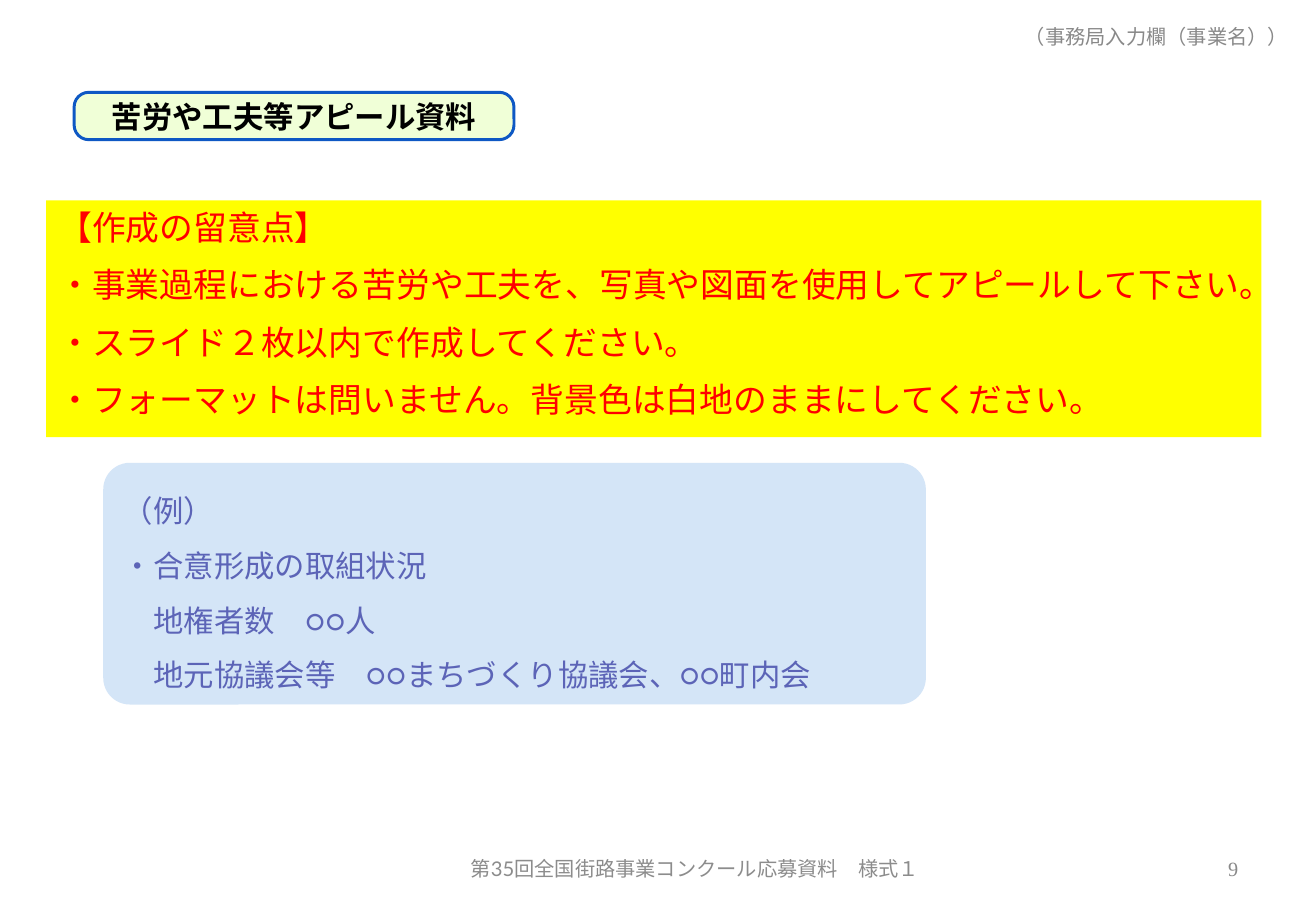
"""Build the appeal-material guidance slide of a street project contest entry."""
from lxml import etree
from pptx import Presentation
from pptx import util as u
from pptx.dml.color import RGBColor
from pptx.enum import shapes, text
from pptx.oxml.ns import qn

PX = 9144
ASIAN_FONT = "Lato"
COLOURS = {
    "heading": "000000",
    "heading_fill": "F0FFD7",
    "heading_line": "0E58C4",
    "notice": "FF0000",
    "notice_fill": "FFFF00",
    "example": "5C64B7",
    "example_fill": "D4E5F7",
    "page": "898989",
    "footer": "8C8C8C",
}
NOTICE = [
    "【作成の留意点】",
    "・事業過程における苦労や工夫を、写真や図面を使用してアピールして下さい。",
    "・スライド２枚以内で作成してください。",
    "・フォーマットは問いません。背景色は白地のままにしてください。",
]
EXAMPLE = [
    "（例）",
    "・合意形成の取組状況",
    "　地権者数　○○人",
    "　地元協議会等　○○まちづくり協議会、○○町内会",
]


def colour(key):
    return RGBColor.from_string(COLOURS[key])


def place(item, left, top, width, height):
    item.left, item.top = left * PX, top * PX
    item.width, item.height = width * PX, height * PX


def write(item, lines, size, font, key, align=text.PP_ALIGN.LEFT,
          anchor=text.MSO_ANCHOR.MIDDLE, bold=False, spacing=1.0, before=0):
    frame = item.text_frame
    frame.text = "\n".join(lines)
    frame.word_wrap = True
    frame.auto_size = text.MSO_AUTO_SIZE.NONE
    frame.vertical_anchor = anchor
    for paragraph in frame.paragraphs:
        paragraph.alignment = align
        paragraph.line_spacing = spacing
        paragraph.space_before = u.Pt(before)
        for run in paragraph.runs:
            run.font.size = u.Pt(size)
            run.font.bold = bold
            run.font.color.rgb = colour(key)
            run.font.name = font
            asian = etree.SubElement(run._r.get_or_add_rPr(), qn("a:ea"))
            asian.set("typeface", ASIAN_FONT)


def rounded_panel(slide, box, corner, fill, line=None):
    panel = slide.shapes.add_shape(
        shapes.MSO_SHAPE.ROUNDED_RECTANGLE, *(side * PX for side in box))
    panel.adjustments[0] = corner
    panel.shadow.inherit = False
    panel.fill.solid()
    panel.fill.fore_color.rgb = colour(fill)
    if line:
        panel.line.color.rgb = colour(line)
        panel.line.width = u.Pt(1.75)
    else:
        panel.line.fill.background()
    return panel


def heading(slide):
    box = (61, 76, 362, 39)
    rounded_panel(slide, box, 0.31, "heading_fill", "heading_line")
    title = slide.shapes.title
    place(title, *box)
    title.text_frame.margin_top = title.text_frame.margin_bottom = 0
    write(title, ["苦労や工夫等アピール資料"], 18, "Arial", "heading",
          align=text.PP_ALIGN.CENTER, bold=True)
    title._element.getparent().append(title._element)


def notice(slide):
    body = slide.placeholders[1]
    place(body, 38, 165, 1000, 195)
    body.fill.solid()
    body.fill.fore_color.rgb = colour("notice_fill")
    write(body, NOTICE, 20, "Times New Roman", "notice",
          anchor=text.MSO_ANCHOR.TOP, before=10)
    for paragraph in body.text_frame.paragraphs:
        properties = paragraph._p.get_or_add_pPr()
        properties.set("marL", "0")
        properties.set("indent", "0")
        etree.SubElement(properties, qn("a:buNone"))


def example(slide):
    panel = rounded_panel(slide, (85, 381, 677, 199), 0.11, "example_fill")
    write(panel, EXAMPLE, 18, "Arial", "example", spacing=1.5)


def label(slide, wording, box, font, key, align):
    caption = slide.shapes.add_textbox(*(side * PX for side in box))
    write(caption, [wording], 12, font, key, align=align)


def main():
    deck = Presentation()
    deck.slide_width, deck.slide_height = 1083 * PX, 750 * PX
    slide = deck.slides.add_slide(deck.slide_layouts[1])
    heading(slide)
    notice(slide)
    example(slide)
    label(slide, "（事務局入力欄（事業名））", (817, 10, 253, 40),
          "Times New Roman", "page", text.PP_ALIGN.RIGHT)
    label(slide, "第35回全国街路事業コンクール応募資料　様式１", (368, 695, 408, 40),
          "Lato", "footer", text.PP_ALIGN.CENTER)
    label(slide, "9", (776, 695, 253, 40),
          "Times New Roman", "page", text.PP_ALIGN.RIGHT)
    deck.save("out.pptx")


if __name__ == "__main__":
    main()
